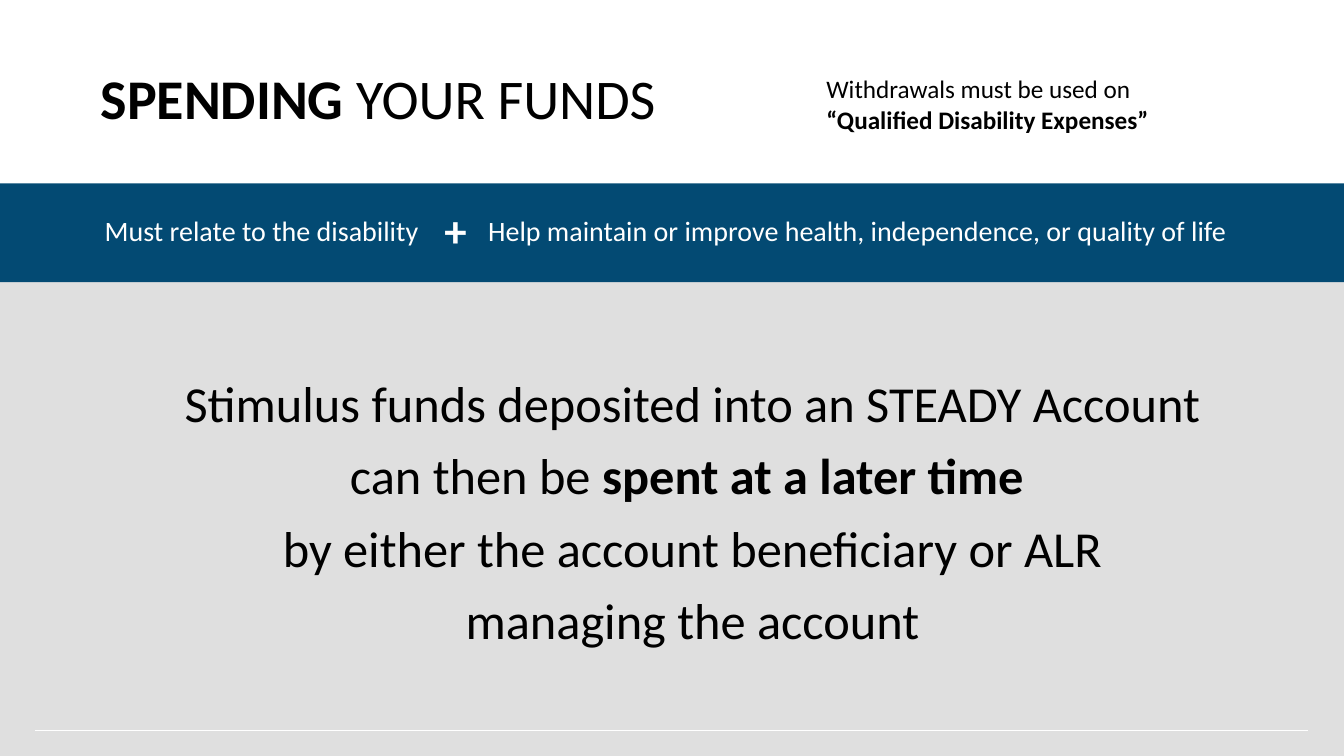
from dataclasses import dataclass
from typing import Optional

from lxml.etree import SubElement
from pptx import Presentation
from pptx.dml.color import RGBColor
from pptx.enum.shapes import MSO_CONNECTOR, MSO_SHAPE
from pptx.enum.text import MSO_ANCHOR, PP_ALIGN
from pptx.oxml.ns import qn
from pptx.slide import Slide
from pptx.util import Pt

BLACK = RGBColor(0x00, 0x00, 0x00)
WHITE = RGBColor(0xFF, 0xFF, 0xFF)
GREY = RGBColor(0xA5, 0xA5, 0xA5)
NAVY = RGBColor(0x03, 0x4A, 0x73)
FONT = "Calibri"
PAGE_WIDTH = 960
PAGE_HEIGHT = 540
BAR_TEXT_TOP = 149


@dataclass(frozen=True)
class Span:
    text: str
    bold: bool = False


@dataclass(frozen=True)
class Band:
    top: float
    height: float
    color: RGBColor
    opacity: int = 100


@dataclass(frozen=True)
class Label:
    left: float
    top: float
    width: float
    height: float
    size: float
    lines: tuple[tuple[Span, ...], ...]
    color: RGBColor = BLACK
    align: PP_ALIGN = PP_ALIGN.CENTER
    anchor: MSO_ANCHOR = MSO_ANCHOR.TOP
    spacing: Optional[float] = None


BANDS = (
    Band(133.2, PAGE_HEIGHT - 133.2, GREY, 35),
    Band(131, 70.6, NAVY),
)

LABELS = (
    Label(583.2, 49, 493.9, 51.1, 18, (
        (Span("Withdrawals must be used on"),),
        (Span("“Qualified Disability Expenses”", True),),
    ), align=PP_ALIGN.LEFT),
    Label(64.8, 32.4, 429.8, 80.6, 40, (
        (Span("SPENDING", True), Span(" YOUR FUNDS")),
    ), align=PP_ALIGN.LEFT, anchor=MSO_ANCHOR.MIDDLE, spacing=0.9),
    Label(250.6, BAR_TEXT_TOP, 723.6, 31.7, 20, (
        (Span("Help maintain or improve health, independence, or quality of life"),),
    ), WHITE),
    Label(35.3, BAR_TEXT_TOP, 303.1, 31.7, 20, (
        (Span("Must relate to the disability"),),
    ), WHITE),
    Label(248.4, 141.1, 154.1, 46.1, 32, ((Span("+", True),),), WHITE),
    Label(81.4, 253.4, 826.6, 216.7, 36, (
        (Span("Stimulus funds deposited into an STEADY Account"),),
        (Span("can then be "), Span("spent at a later time ", True)),
        (Span("by either the account beneficiary or ALR"),),
        (Span("managing the account"),),
    ), spacing=1.2),
)


def draw_band(page: Slide, band: Band) -> None:
    shape = page.shapes.add_shape(
        MSO_SHAPE.RECTANGLE, Pt(0), Pt(band.top), Pt(PAGE_WIDTH), Pt(band.height)
    )
    shape.shadow.inherit = False
    shape.line.fill.background()
    shape.fill.solid()
    shape.fill.fore_color.rgb = band.color
    if band.opacity < 100:
        color = shape.fill._xPr.find(f".//{qn('a:srgbClr')}")
        SubElement(color, qn("a:alpha")).set("val", str(band.opacity * 1000))


def draw_label(page: Slide, label: Label) -> None:
    box = page.shapes.add_textbox(
        Pt(label.left), Pt(label.top), Pt(label.width), Pt(label.height)
    )
    frame = box.text_frame
    frame.word_wrap = True
    frame.vertical_anchor = label.anchor
    for index, line in enumerate(label.lines):
        para = frame.add_paragraph() if index else frame.paragraphs[0]
        para.alignment = label.align
        para.line_spacing = label.spacing
        para.font.name = FONT
        para.font.size = Pt(label.size)
        para.font.color.rgb = label.color
        for span in line:
            run = para.add_run()
            run.text = span.text
            run.font.bold = span.bold


def draw_footer_rule(page: Slide) -> None:
    rule = page.shapes.add_connector(
        MSO_CONNECTOR.STRAIGHT, Pt(25.2), Pt(522), Pt(934.6), Pt(522)
    )
    rule.line.color.rgb = WHITE
    rule.line.width = Pt(0.5)
    SubElement(rule._element.spPr, qn("a:effectLst"))


def main() -> None:
    deck = Presentation()
    deck.slide_width = Pt(PAGE_WIDTH)
    deck.slide_height = Pt(PAGE_HEIGHT)
    page = deck.slides.add_slide(deck.slide_layouts[6])
    for band in BANDS:
        draw_band(page, band)
    draw_footer_rule(page)
    for label in LABELS:
        draw_label(page, label)
    deck.save("out.pptx")


if __name__ == "__main__":
    main()
